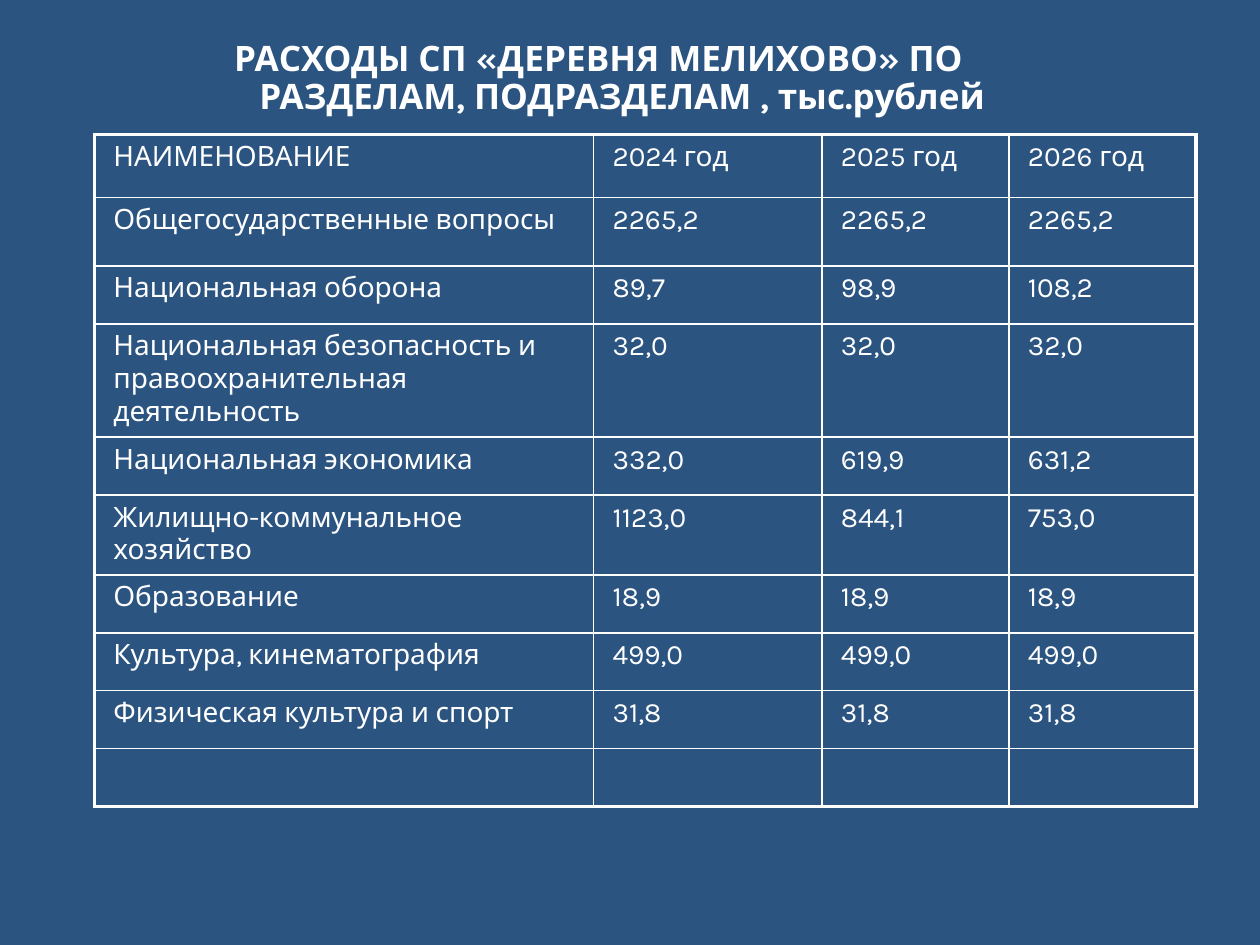
from lxml.etree import SubElement
from pptx import Presentation
from pptx.dml.color import RGBColor
from pptx.enum.text import PP_ALIGN
from pptx.oxml.ns import qn
from pptx.util import Pt


def color(value):
    return RGBColor.from_string(value)


def add_text(para, text, size, bold=False):
    span = para.add_run()
    span.text = text
    span.font.name = "Karla"
    span.font.size = Pt(size)
    span.font.bold = bold
    span.font.color.rgb = color(WHITE)


WHITE = "FFFFFF"
THICK, THIN = 2.25, 1
expenses = [
    ("НАИМЕНОВАНИЕ", "2024 год", "2025 год", "2026 год"),
    ("Общегосударственные вопросы", "2265,2", "2265,2", "2265,2"),
    ("Национальная оборона", "89,7", "98,9", "108,2"),
    ("Национальная безопасность и правоохранительная деятельность", "32,0", "32,0", "32,0"),
    ("Национальная экономика", "332,0", "619,9", "631,2"),
    ("Жилищно-коммунальное хозяйство", "1123,0", "844,1", "753,0"),
    ("Образование", "18,9", "18,9", "18,9"),
    ("Культура, кинематография", "499,0", "499,0", "499,0"),
    ("Физическая культура и спорт", "31,8", "31,8", "31,8"),
    ("", "", "", ""),
]
widths = [285.3, 130.5, 106.8, 106.8]
heights = [36, 39, 33.1, 51.8, 33.1, 29.5] + [33.1] * 4

deck = Presentation()
deck.slide_width, deck.slide_height = Pt(720), Pt(540)
page = deck.slides.add_slide(deck.slide_layouts[6])
page.background.fill.solid()
page.background.fill.fore_color.rgb = color("2B5481")

box = page.shapes.add_textbox(Pt(90), Pt(20), Pt(504), Pt(51))
box.text_frame.word_wrap = True
para = box.text_frame.paragraphs[0]
para.alignment = PP_ALIGN.CENTER
para.line_spacing = 0.9
properties = para._p.get_or_add_pPr()
properties.set("marL", str(Pt(27)))
properties.set("indent", str(Pt(-27)))
add_text(para, "РАСХОДЫ СП «ДЕРЕВНЯ МЕЛИХОВО» ПО РАЗДЕЛАМ, ПОДРАЗДЕЛАМ , тыс.рублей", 20, True)

frame = page.shapes.add_table(
    len(expenses), len(widths), Pt(54), Pt(77), Pt(sum(widths)), Pt(sum(heights))
)
table = frame.table
table.first_row = False
table.horz_banding = False
for column, width in zip(table.columns, widths):
    column.width = Pt(width)
for row, height in zip(table.rows, heights):
    row.height = Pt(height)

last_row, last_column = len(expenses) - 1, len(widths) - 1
for row_index, values in enumerate(expenses):
    for column_index, value in enumerate(values):
        cell = table.cell(row_index, column_index)
        cell.fill.background()
        para = cell.text_frame.paragraphs[0]
        para._p.get_or_add_pPr().set("marL", str(Pt(3.6)))
        if value:
            add_text(para, value, 16)
        cell_properties = cell._tc.get_or_add_tcPr()
        outer_edges = {
            "a:lnL": column_index == 0,
            "a:lnR": column_index == last_column,
            "a:lnT": row_index == 0,
            "a:lnB": row_index == last_row,
        }
        for position, (edge, outer) in enumerate(outer_edges.items()):
            line = SubElement(cell_properties, qn(edge), w=str(Pt(THICK if outer else THIN)))
            SubElement(SubElement(line, qn("a:solidFill")), qn("a:srgbClr"), val=WHITE)
            cell_properties.insert(position, line)

deck.save("out.pptx")
